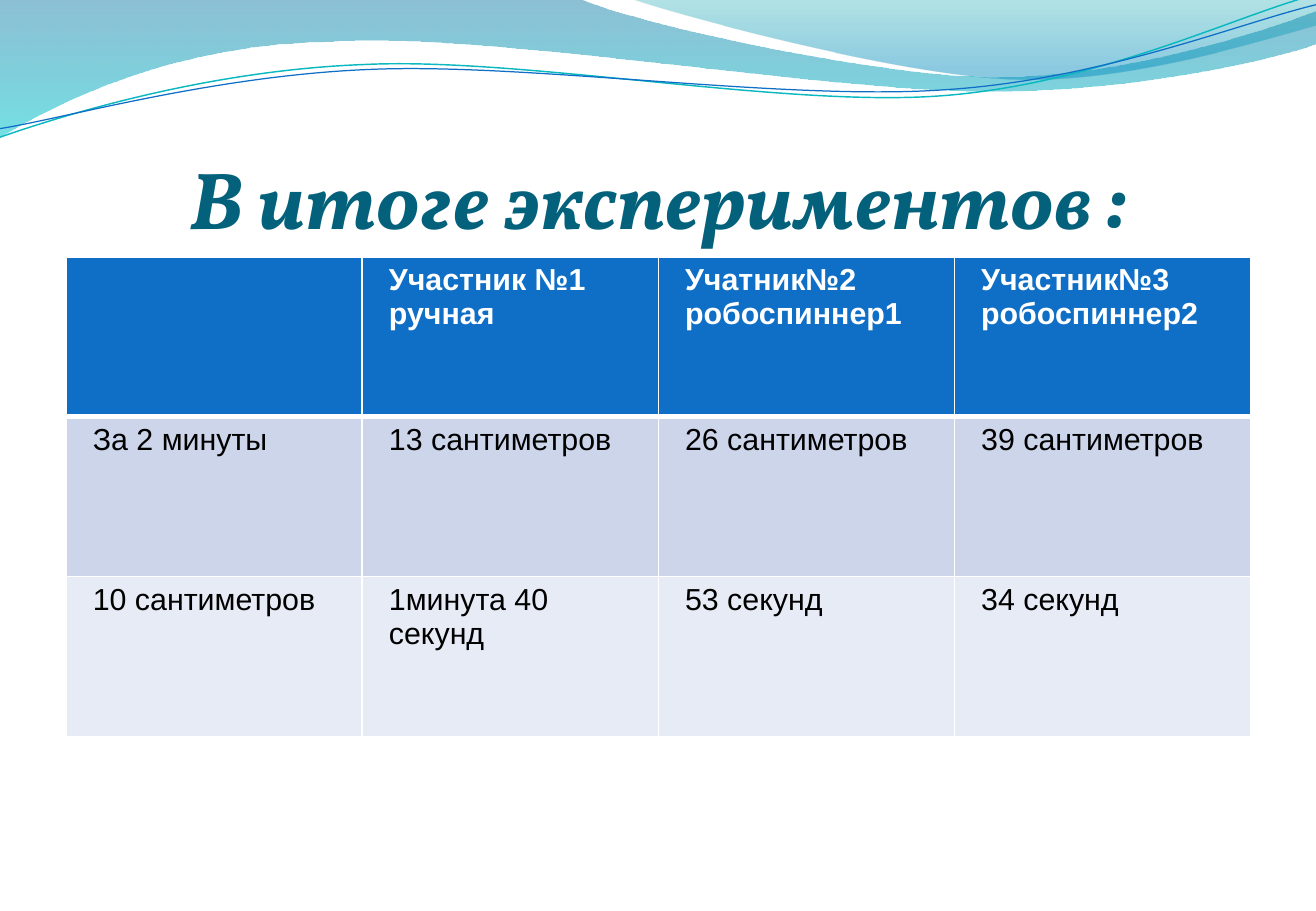
from dataclasses import dataclass

from lxml.etree import SubElement
from pptx import Presentation
from pptx.dml.color import RGBColor
from pptx.enum.text import MSO_ANCHOR, PP_ALIGN
from pptx.oxml.ns import qn
from pptx.shapes.autoshape import Shape
from pptx.slide import Slide
from pptx.table import _Cell
from pptx.util import Cm, Pt

Point = tuple[float, float]


@dataclass
class Outline:
    start: Point
    segments: list[list[Point]]


@dataclass
class GradientStop:
    position: float
    color: str
    opacity: int


@dataclass
class Wave:
    outline: Outline
    stops: tuple[GradientStop, GradientStop]


@dataclass
class Ribbon:
    outline: Outline
    color: str
    width: float


@dataclass
class RowStyle:
    fill: str
    font_color: str
    bold: bool
    top: float
    bottom: float


WAVES = [
    Wave(
        Outline((0, 0), [
            [(12.12, -0.03)],
            [(13.08, 0.43), (18.26, 1.6), (20.88, 1.6)],
            [(23.47, 1.6), (26.37, 0.66), (27.51, 0.23)],
            [(27.53, 0.91)],
            [(27.05, 1.12), (23.93, 1.93), (20.52, 1.9)],
            [(17.12, 1.9), (10.52, 0.71), (7.09, 0.86)],
            [(3.56, 0.91), (1.27, 2.11), (-0.03, 2.87)],
        ]),
        (GradientStop(0, "0074A1", 45), GradientStop(1, "00C6CF", 55)),
    ),
    Wave(
        Outline((13.18, -0.03), [
            [(14.02, 0.28), (18.77, 1.57), (21.16, 1.65)],
            [(23.55, 1.75), (26.47, 0.81), (27.51, 0.53)],
            [(27.51, 0)],
        ]),
        (GradientStop(0, "00A1A9", 30), GradientStop(0.8, "008BBF", 45)),
    ),
]

RIBBONS = [
    Ribbon(
        Outline((0, 2.87), [
            [(1.32, 2.41), (4.34, 1.47), (7.62, 1.35)],
            [(10.87, 1.19), (16.31, 2.24), (19.61, 2.01)],
            [(22.91, 1.78), (25.83, 0.33), (27.46, -0.1)],
        ]),
        "0AB8BF", 0.85,
    ),
    Ribbon(
        Outline((0, 2.69), [
            [(1.3, 2.49), (4.5, 1.57), (7.8, 1.45)],
            [(11.07, 1.32), (16.43, 2.11), (19.71, 1.88)],
            [(23.01, 1.68), (25.91, 0.48), (27.51, 0.1)],
        ]),
        "0F6FC6", 0.75,
    ),
]

RESULTS = [
    ["", "Участник №1\nручная", "Учатник№2\nробоспиннер1", "Участник№3\nробоспиннер2"],
    ["За 2 минуты", "13 сантиметров", "26 сантиметров", "39 сантиметров"],
    ["10 сантиметров", "1минута 40 секунд", "53 секунд", "34 секунд"],
]

ROW_STYLES = [
    RowStyle("0F6FC6", "FFFFFF", True, 1, 3),
    RowStyle("CCD5EA", "000000", False, 3, 1),
    RowStyle("E7EBF5", "000000", False, 1, 1),
]


def rgb(color: str) -> RGBColor:
    return RGBColor.from_string(color)


def bend_segments(shape: Shape, outline: Outline) -> None:
    lines = iter(list(shape._element.iter(qn("a:lnTo"))))
    for segment in outline.segments:
        pieces = [next(lines) for _ in segment]
        if len(pieces) == 3:
            curve, *rest = pieces
            curve.tag = qn("a:cubicBezTo")
            for piece in rest:
                curve.append(piece[0])
                piece.getparent().remove(piece)


def draw_outline(page: Slide, outline: Outline, close: bool) -> Shape:
    points = [(Cm(x), Cm(y)) for segment in outline.segments for x, y in segment]
    left, top = outline.start
    builder = page.shapes.build_freeform(Cm(left), Cm(top))
    builder.add_line_segments(points, close=close)
    shape = builder.convert_to_shape()
    shape.shadow.inherit = False
    bend_segments(shape, outline)
    return shape


def draw_wave(page: Slide, wave: Wave) -> None:
    shape = draw_outline(page, wave.outline, True)
    shape.line.fill.background()
    shape.fill.gradient()
    shape.fill.gradient_angle = 270
    for target, stop in zip(shape.fill.gradient_stops, wave.stops):
        target.position = stop.position
        target.color.rgb = rgb(stop.color)
    colors = shape._element.spPr.iter(qn("a:srgbClr"))
    for color, stop in zip(colors, wave.stops):
        SubElement(color, qn("a:alpha"), val=str(stop.opacity * 1000))


def draw_ribbon(page: Slide, ribbon: Ribbon) -> None:
    shape = draw_outline(page, ribbon.outline, False)
    shape.fill.background()
    shape.line.color.rgb = rgb(ribbon.color)
    shape.line.width = Pt(ribbon.width)


def draw_title(page: Slide) -> None:
    box = page.shapes.add_textbox(Cm(1.37), Cm(1.96), Cm(24.77), Cm(3.18))
    frame = box.text_frame
    frame.word_wrap = True
    frame.vertical_anchor = MSO_ANCHOR.BOTTOM
    frame.margin_left = frame.margin_right = frame.margin_bottom = 0
    frame.margin_top = Cm(0.13)
    frame.text = "В итоге экспериментов :"
    para = frame.paragraphs[0]
    para.alignment = PP_ALIGN.CENTER
    font = para.runs[0].font
    font.name, font.size = "Vollkorn", Pt(48)
    font.bold = font.italic = True
    font.color.rgb = rgb("04617B")


def fill_cell(cell: _Cell, text: str, style: RowStyle) -> None:
    properties = cell._tc.get_or_add_tcPr()
    borders = {"a:lnL": 1, "a:lnR": 1, "a:lnT": style.top, "a:lnB": style.bottom}
    for tag, width in borders.items():
        border = SubElement(properties, qn(tag), w=str(Pt(width)))
        SubElement(SubElement(border, qn("a:solidFill")), qn("a:srgbClr"), val="FFFFFF")
    cell.fill.solid()
    cell.fill.fore_color.rgb = rgb(style.fill)
    cell.margin_left = cell.margin_right = Cm(0.56)
    cell.margin_top = cell.margin_bottom = Cm(0.13)
    cell.text_frame.text = text
    for para in cell.text_frame.paragraphs:
        for span in para.runs:
            span.font.name, span.font.size = "Arial", Pt(18)
            span.font.bold = style.bold
            span.font.color.rgb = rgb(style.font_color)


def draw_results(page: Slide) -> None:
    frame = page.shapes.add_table(
        len(RESULTS), len(RESULTS[0]), Cm(1.38), Cm(5.37), Cm(24.76), Cm(10.03)
    )
    for row, texts, style in zip(frame.table.rows, RESULTS, ROW_STYLES):
        for cell, text in zip(row.cells, texts):
            fill_cell(cell, text, style)


def main() -> None:
    deck = Presentation()
    deck.slide_width, deck.slide_height = Cm(27.51), Cm(19.05)
    page = deck.slides.add_slide(deck.slide_layouts[6])
    for wave in WAVES:
        draw_wave(page, wave)
    for ribbon in RIBBONS:
        draw_ribbon(page, ribbon)
    draw_title(page)
    draw_results(page)
    deck.save("out.pptx")


if __name__ == "__main__":
    main()
